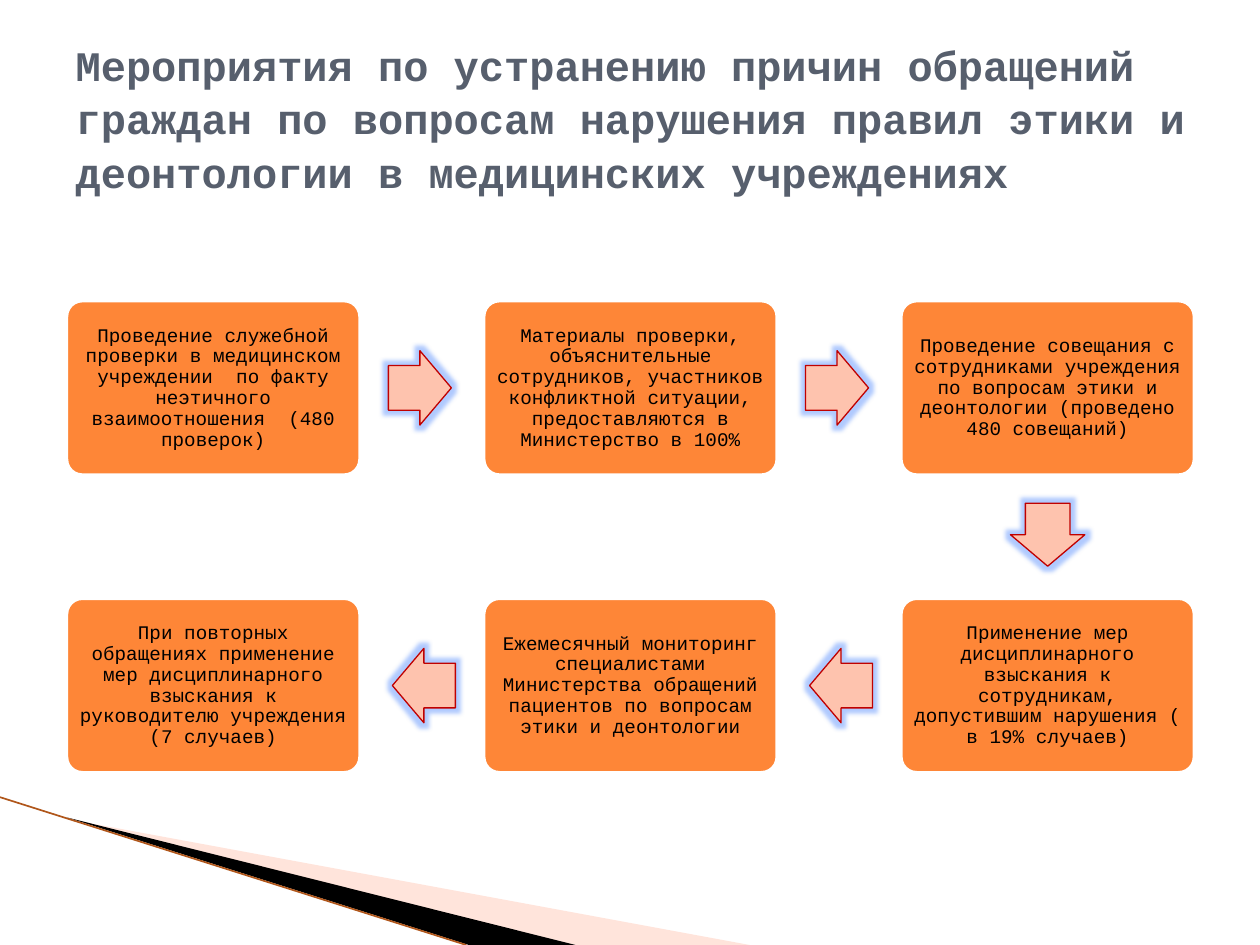
from lxml import etree
from pptx import Presentation
from pptx.dml.color import RGBColor
from pptx.enum import shapes, text
from pptx.oxml import ns
from pptx.util import Cm, Pt

FONT = "Courier New"
TITLE = ("Мероприятия по устранению причин обращений граждан по вопросам "
         "нарушения правил этики и деонтологии в медицинских учреждениях")

# Steps in order of flow: column, row, wording
STEPS = [
    (0, 0, "Проведение служебной проверки в медицинском учреждении  по факту "
           "неэтичного взаимоотношения  (480 проверок)"),
    (1, 0, "Материалы проверки, объяснительные сотрудников, участников "
           "конфликтной ситуации, предоставляются в Министерство в 100%"),
    (2, 0, "Проведение совещания с сотрудниками учреждения по вопросам этики и "
           "деонтологии (проведено 480 совещаний)"),
    (2, 1, "Применение мер дисциплинарного взыскания к сотрудникам, "
           "допустившим нарушения ( в 19% случаев)"),
    (1, 1, "Ежемесячный мониторинг специалистами Министерства обращений "
           "пациентов по вопросам этики и деонтологии"),
    (0, 1, "При повторных обращениях применение мер дисциплинарного взыскания "
           "к руководителю учреждения (7 случаев)"),
]

# Corner wedges: fill, opacity in percent, corners in hundredths of a cm
WEDGES = [
    ("FFBCA5", 40, [(140, 1652), (1511, 1905), (1158, 1905)]),
    ("000000", 100, [(135, 1648), (1160, 1905), (945, 1905)]),
]

# Grid, in cm
LEFT, TOP = 1.3, 6.02
STEP_W, STEP_H = 6, 3.6
PITCH_X, PITCH_Y = 8.41, 6
ARROW_W, ARROW_H = 1.27, 1.5
ARROW_SHIFT = 0.04  # arrows sit slightly nearer the step they leave
ROTATION = {(1, 0): 0, (0, 1): 90, (-1, 0): 180}


def rgb(value):
    return RGBColor.from_string(value)


def paint(shape, fill, line=None, width=0):
    shape.shadow.inherit = False
    shape.fill.solid()
    shape.fill.fore_color.rgb = rgb(fill)
    if line:
        shape.line.color.rgb = rgb(line)
        shape.line.width = Pt(width)
    else:
        shape.line.fill.background()


def add_child(parent, tag, **attributes):
    return etree.SubElement(parent, ns.qn(tag), attributes)


def add_glow(shape, colour, radius, opacity):
    effects = shape._element.spPr.find(ns.qn("a:effectLst"))
    glow = add_child(effects, "a:glow", rad=str(Pt(radius)))
    tint = add_child(glow, "a:srgbClr", val=colour)
    add_child(tint, "a:alpha", val=str(opacity * 1000))


def add_wedge(slide, fill, opacity, corners):
    builder = slide.shapes.build_freeform(*corners[0], scale=Cm(0.01))
    builder.add_line_segments(corners[1:], close=True)
    wedge = builder.convert_to_shape()
    paint(wedge, fill)
    if opacity < 100:
        tint = wedge._element.spPr.find(".//" + ns.qn("a:srgbClr"))
        add_child(tint, "a:alpha", val=str(opacity * 1000))


def add_step(slide, column, row, wording):
    step = slide.shapes.add_shape(
        shapes.MSO_SHAPE.ROUNDED_RECTANGLE,
        Cm(LEFT + column * PITCH_X), Cm(TOP + row * PITCH_Y),
        Cm(STEP_W), Cm(STEP_H))
    step.adjustments[0] = 0.1
    paint(step, "FE8637", "FFFFFF", 4.33)
    frame = step.text_frame
    frame.word_wrap = True
    frame.vertical_anchor = text.MSO_ANCHOR.MIDDLE
    frame.margin_left = frame.margin_right = Cm(0.13)
    frame.margin_top = frame.margin_bottom = Cm(0.13)
    paragraph = frame.paragraphs[0]
    paragraph.text = wording
    paragraph.alignment = text.PP_ALIGN.CENTER
    paragraph.line_spacing = 0.9
    paragraph.font.name = FONT
    paragraph.font.size = Pt(11)
    paragraph.font.color.rgb = rgb("000000")


def add_arrow(slide, column, row, dx, dy):
    middle_x = LEFT + STEP_W / 2 + (column + dx / 2) * PITCH_X - dx * ARROW_SHIFT
    middle_y = TOP + STEP_H / 2 + (row + dy / 2) * PITCH_Y - dy * ARROW_SHIFT
    arrow = slide.shapes.add_shape(
        shapes.MSO_SHAPE.RIGHT_ARROW,
        Cm(middle_x - ARROW_W / 2), Cm(middle_y - ARROW_H / 2),
        Cm(ARROW_W), Cm(ARROW_H))
    arrow.adjustments[0] = 0.6
    arrow.adjustments[1] = 0.5
    arrow.rotation = ROTATION[dx, dy]
    paint(arrow, "FEC3AE", "C00000", 0.75)
    add_glow(arrow, "3B7BFF", 5, 40)


def main():
    deck = Presentation()
    deck.slide_width, deck.slide_height = Cm(25.4), Cm(19.05)
    slide = deck.slides.add_slide(deck.slide_layouts[5])

    # Corner decoration
    for wedge in WEDGES:
        add_wedge(slide, *wedge)
    edge = slide.shapes.add_connector(
        shapes.MSO_CONNECTOR.STRAIGHT, Cm(0), Cm(16.07), Cm(9.4), Cm(19.05))
    edge.line.color.rgb = rgb("B0561A")
    edge.line.width = Pt(0.95)
    add_child(edge._element.spPr, "a:effectLst")

    # Title
    title = slide.shapes.title
    title.left, title.top = Cm(1.27), Cm(0.76)
    title.width, title.height = Cm(22.86), Cm(3.18)
    frame = title.text_frame
    frame.word_wrap = True
    frame.auto_size = text.MSO_AUTO_SIZE.NONE
    frame.vertical_anchor = text.MSO_ANCHOR.MIDDLE
    frame.margin_right = Cm(0.1)
    heading = frame.paragraphs[0]
    heading.text = TITLE
    heading.alignment = text.PP_ALIGN.LEFT
    heading.line_spacing = 1.06
    heading.font.name = FONT
    heading.font.size = Pt(24)
    heading.font.bold = True
    heading.font.color.rgb = rgb("575F6D")

    # Steps, each followed by an arrow to the next one
    for index, (column, row, wording) in enumerate(STEPS):
        add_step(slide, column, row, wording)
        if index + 1 < len(STEPS):
            next_column, next_row, _ = STEPS[index + 1]
            add_arrow(slide, column, row, next_column - column, next_row - row)

    deck.save("out.pptx")


if __name__ == "__main__":
    main()
